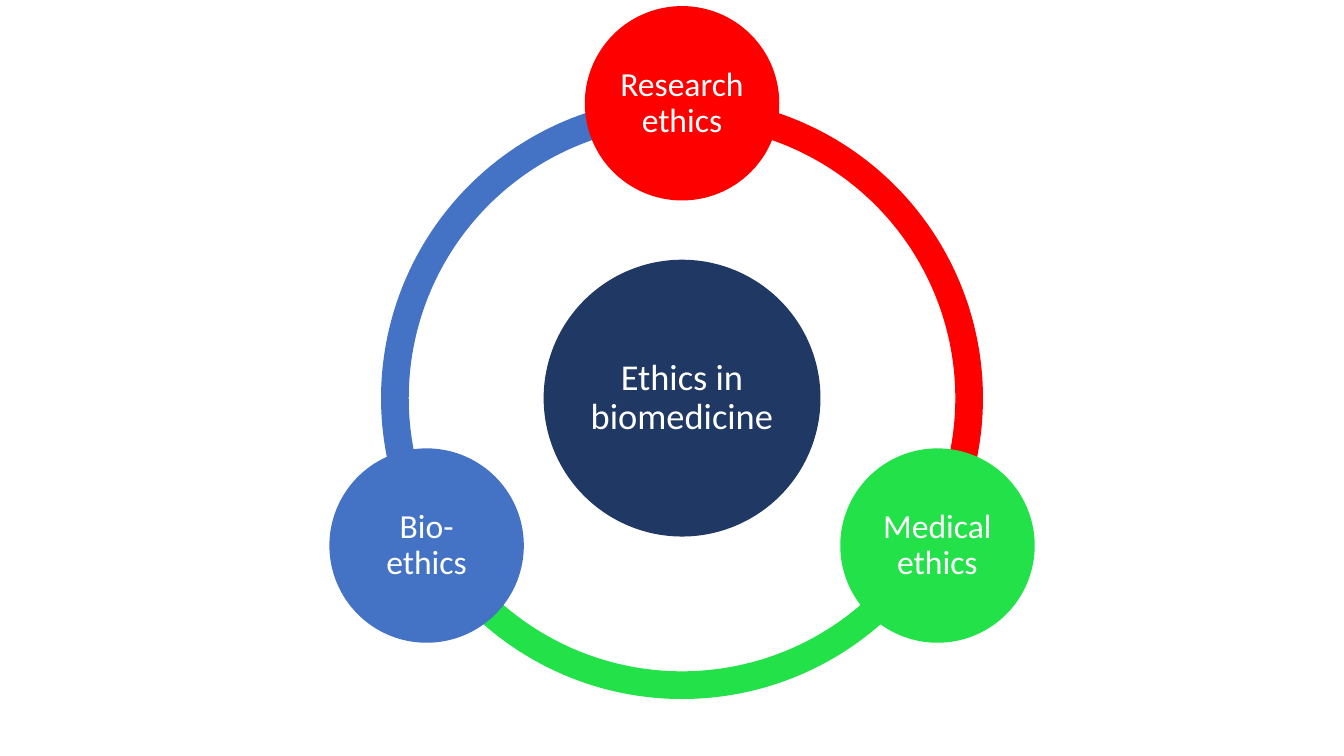
from dataclasses import dataclass
from math import cos, radians, sin

from pptx import Presentation
from pptx.dml.color import RGBColor
from pptx.enum.shapes import MSO_SHAPE
from pptx.enum.text import MSO_ANCHOR, PP_ALIGN
from pptx.util import Inches, Pt


@dataclass(frozen=True)
class Theme:
    """Colours and type sizes of the slide."""
    font: str = "Calibri"
    text: str = "FFFFFF"
    hub: str = "203864"
    research: str = "FF0000"
    medical: str = "23E148"
    bio: str = "4472C4"
    hub_size: int = 26
    topic_size: int = 24


@dataclass(frozen=True)
class Box:
    """A square given by its centre and side, in inches."""
    x: float
    y: float
    side: float

    def around(self, angle, distance, side):
        """Return a square whose centre lies at an angle and distance from this one."""
        turn = radians(angle)
        return Box(self.x + distance * cos(turn), self.y + distance * sin(turn), side)


THEME = Theme()
WIDTH, HEIGHT = 13.33, 7.5
TOPICS = [
    ("Research ethics", THEME.research),
    ("Medical ethics", THEME.medical),
    ("Bio-ethics", THEME.bio),
]
START = 270
STEP = 360 / len(TOPICS)
ORBIT, HUB, TOPIC, BAND = 0.49, 0.46, 0.323, 0.046


def add_shape(page, kind, box, color):
    """Add a plain filled shape centred in the box."""
    half = box.side / 2
    shape = page.shapes.add_shape(
        kind, Inches(box.x - half), Inches(box.y - half), Inches(box.side), Inches(box.side))
    shape.shadow.inherit = False
    shape.fill.solid()
    shape.fill.fore_color.rgb = RGBColor.from_string(color)
    shape.line.fill.background()
    return shape


def write(shape, text, size, color=THEME.text, font=THEME.font, inset=0.03):
    """Write centred text inside a shape."""
    frame = shape.text_frame
    frame.word_wrap = True
    frame.vertical_anchor = MSO_ANCHOR.MIDDLE
    frame.margin_left = frame.margin_right = Inches(inset)
    frame.margin_top = frame.margin_bottom = Inches(inset)
    para = frame.paragraphs[0]
    para.alignment = PP_ALIGN.CENTER
    para.line_spacing = 0.9
    span = para.add_run()
    span.text = text
    span.font.size = Pt(size)
    span.font.name = font
    span.font.color.rgb = RGBColor.from_string(color)


def add_arc(page, box, start, color):
    """Add one ring segment running clockwise from the start angle."""
    arc = add_shape(page, MSO_SHAPE.BLOCK_ARC, box, color)
    for index, angle in enumerate((start, start + STEP)):
        arc.adjustments[index] = angle % 360 * 0.6
    arc.adjustments[2] = BAND


def add_circle(page, box, text, color, size, inset=0.03):
    """Add a labelled circle."""
    circle = add_shape(page, MSO_SHAPE.OVAL, box, color)
    write(circle, text, size, inset=inset)


def add_cycle(page, box):
    """Draw the ring, the hub and the topics around it."""
    angles = [START + STEP * index for index in range(len(TOPICS))]
    for angle, (_, color) in reversed(list(zip(angles, TOPICS))):
        add_arc(page, box, angle, color)
    hub = Box(box.x, box.y, box.side * HUB)
    add_circle(page, hub, "Ethics in biomedicine", THEME.hub, THEME.hub_size, inset=0.04)
    for angle, (text, color) in zip(angles, TOPICS):
        place = box.around(angle, box.side * ORBIT, box.side * TOPIC)
        add_circle(page, place, text, color, THEME.topic_size)


def main():
    """Build and save the deck."""
    deck = Presentation()
    deck.slide_width, deck.slide_height = Inches(WIDTH), Inches(HEIGHT)
    page = deck.slides.add_slide(deck.slide_layouts[6])
    add_cycle(page, Box(WIDTH / 2 + 0.1, HEIGHT / 2 + 0.2, 5.97))
    deck.save("out.pptx")


if __name__ == "__main__":
    main()
